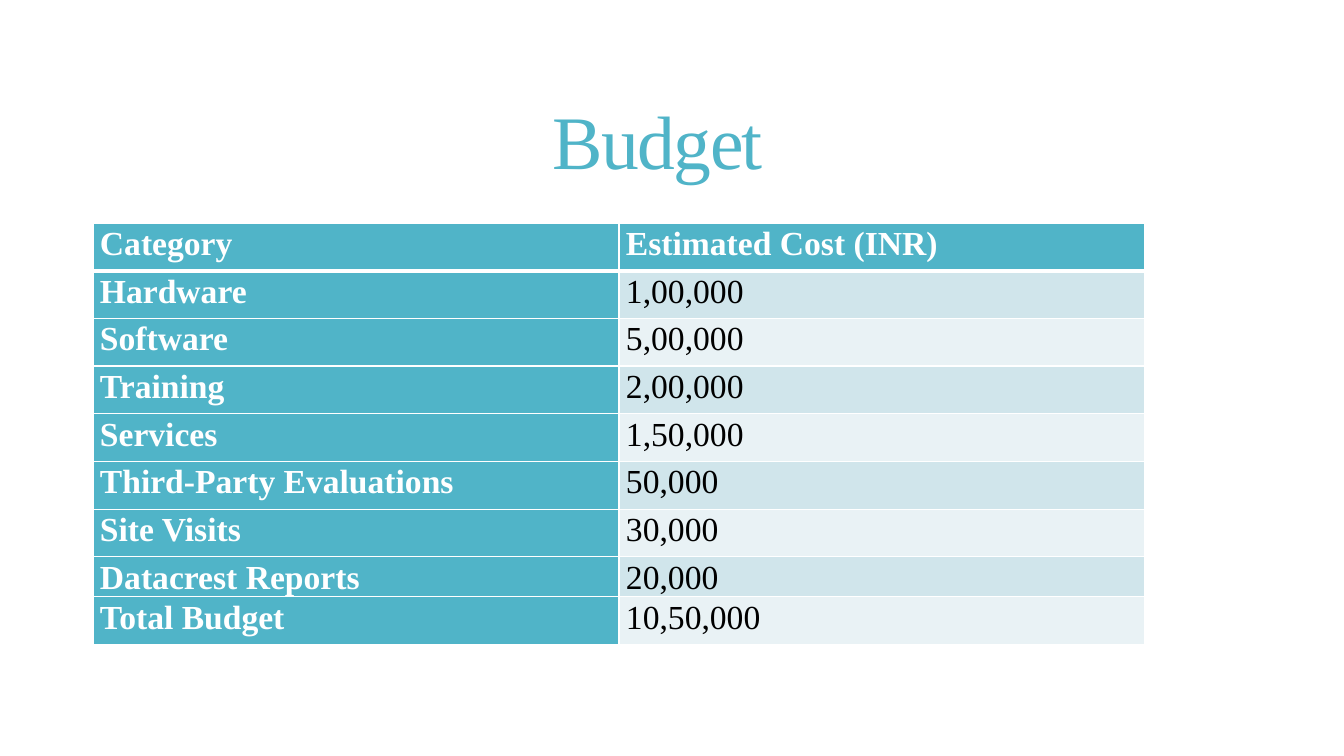
from lxml import etree
from pptx import Presentation
from pptx.dml.color import RGBColor
from pptx.enum.text import MSO_ANCHOR, PP_ALIGN
from pptx.oxml.ns import qn
from pptx.util import Pt

EMU_PER_PX = 914400 / 100.8
FONT = "Times New Roman"
LEFT, CENTER = PP_ALIGN.LEFT, PP_ALIGN.CENTER
TOP, MIDDLE = MSO_ANCHOR.TOP, MSO_ANCHOR.MIDDLE
COLORS = {
    "teal": "50B4C8",
    "band_dark": "D0E5EB",
    "band_light": "E9F2F5",
    "white": "FFFFFF",
    "black": "000000",
}
BUDGET = [
    ("Category", "Estimated Cost (INR)"),
    ("Hardware", "1,00,000"),
    ("Software", "5,00,000"),
    ("Training", "2,00,000"),
    ("Services", "1,50,000"),
    ("Third-Party Evaluations", "50,000"),
    ("Site Visits", "30,000"),
    ("Datacrest Reports", "20,000"),
    ("Total Budget", "10,50,000"),
]
SHORT_ROW = 7


def px(length):
    return round(length * EMU_PER_PX)


def write(frame, text, *, size, color, bold=False, align=LEFT, line=1.07, after=8, tracking=0):
    paragraph = frame.paragraphs[0]
    paragraph.alignment = align
    paragraph.line_spacing = line
    paragraph.space_before = Pt(0)
    paragraph.space_after = Pt(after)
    run = paragraph.add_run()
    run.text = text
    run.font.name = FONT
    run.font.size = Pt(size)
    run.font.bold = bold
    run.font.color.rgb = RGBColor.from_string(COLORS[color])
    if tracking:
        run.font._element.set("spc", str(tracking))


prs = Presentation()
prs.slide_width, prs.slide_height = px(1344), px(756)
slide = prs.slides.add_slide(prs.slide_layouts[5])

title = slide.shapes.title
title.left, title.top, title.width, title.height = px(73), px(55), px(1187), px(182)
title.text_frame.vertical_anchor = MIDDLE
write(title.text_frame, "Budget ", size=54, color="teal", align=CENTER,
      line=0.85, after=0, tracking=-120)

table = slide.shapes.add_table(len(BUDGET), 2, px(93), px(223), px(1052), px(421)).table
for column in table.columns:
    column.width = px(526)

# The first seven rows share 334 px evenly.
regular_height = px(334) // 7
for r, entries in enumerate(BUDGET):
    table.rows[r].height = px(33) if r == SHORT_ROW else regular_height
    for c, entry in enumerate(entries):
        cell = table.cell(r, c)
        heading = r == 0 or c == 0
        band = "band_dark" if r % 2 else "band_light"
        cell.fill.solid()
        cell.fill.fore_color.rgb = RGBColor.from_string(COLORS["teal" if heading else band])
        cell.margin_left = cell.margin_right = px(7)
        cell.margin_top = cell.margin_bottom = 0
        cell.vertical_anchor = TOP
        write(cell.text_frame, entry, size=24, color="white" if heading else "black", bold=heading)

        # Borders come before the fill in the cell properties.
        properties = cell._tc.get_or_add_tcPr()
        for position, side in enumerate(("lnL", "lnR", "lnT", "lnB")):
            under_header = (r, side) in ((0, "lnB"), (1, "lnT"))
            border = etree.Element(qn(f"a:{side}"), w=str(Pt(3 if under_header else 1)))
            border_fill = etree.SubElement(border, qn("a:solidFill"))
            etree.SubElement(border_fill, qn("a:srgbClr"), val=COLORS["white"])
            properties.insert(position, border)

prs.save("out.pptx")
